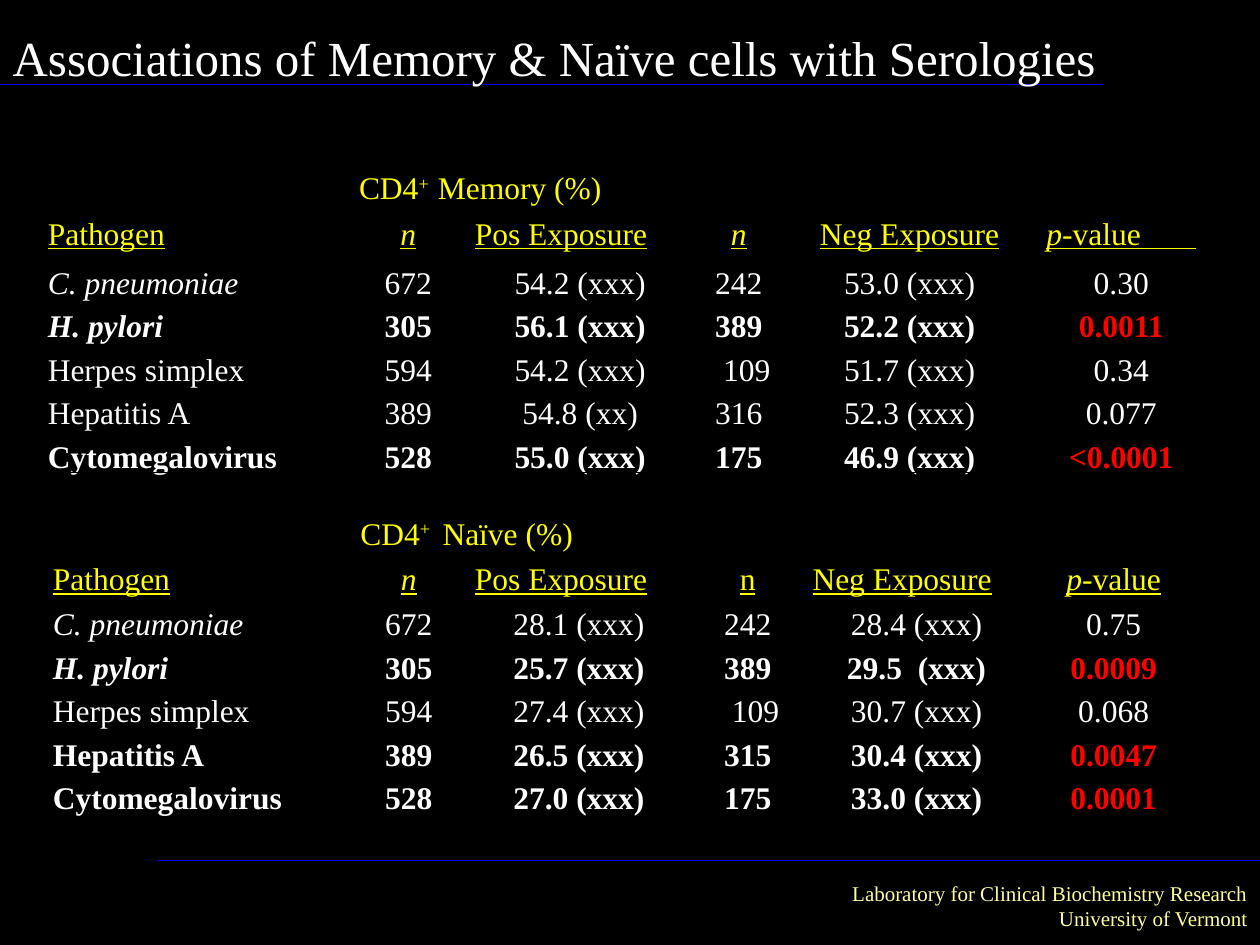
from lxml.etree import SubElement
from pptx import Presentation
from pptx.dml.color import RGBColor
from pptx.enum.shapes import MSO_CONNECTOR as Connector
from pptx.enum.text import MSO_ANCHOR as Anchor, MSO_AUTO_SIZE as AutoSize, PP_ALIGN as Align
from pptx.oxml.ns import qn
from pptx.util import Inches, Pt

COLORS = {"ground": "000000", "text": "FFFFFF", "heading": "FFFF00",
          "alert": "FF0000", "footer": "FFFF99", "rule": "0000FF"}
PLAIN_TABLE = "{2D5ABB26-0587-4C30-8999-92F81FD0307C}"
COLUMNS, ROWS = 100, 75  # grid over the slide

PATHOGENS = ["C. pneumoniae", "H. pylori", "Herpes simplex", "Hepatitis A", "Cytomegalovirus"]
POSITIVE_COUNTS = ["672", "305", "594", "389", "528"]

MEMORY = {
    "heading": [("CD4", {}), ("+  ", {"raised": True}), ("Memory (%)", {})],
    "count": {"italic": True}, "negative_align": Align.CENTER, "p_tail": "-value       ",
    "results": [
        ("54.2 (xxx)", "242", "53.0 (xxx)", "0.30"),
        ("56.1 (xxx)", "389", "52.2 (xxx)", "0.0011"),
        ("54.2 (xxx)", "109", "51.7 (xxx)", "0.34"),
        ("54.8 (xx)", "316", "52.3 (xxx)", "0.077"),
        ("55.0 (xxx)", "175", "46.9 (xxx)", "<0.0001"),
    ],
}
NAIVE = {
    "heading": [("CD4", {}), ("+ ", {"raised": True}), (" Naïve (%)", {})],
    "count": {}, "negative_align": Align.LEFT, "p_tail": "-value",
    "results": [
        ("28.1 (xxx)", "242", "28.4 (xxx)", "0.75"),
        ("25.7 (xxx)", "389", "29.5  (xxx)", "0.0009"),
        ("27.4 (xxx)", "109", "30.7 (xxx)", "0.068"),
        ("26.5 (xxx)", "315", "30.4 (xxx)", "0.0047"),
        ("27.0 (xxx)", "175", "33.0 (xxx)", "0.0001"),
    ],
}


class SlideBuilder:
    font = "Times New Roman"

    def __init__(self, deck):
        self.column = deck.slide_width / COLUMNS
        self.row = deck.slide_height / ROWS
        self.page = deck.slides.add_slide(deck.slide_layouts[5])
        fill = self.page.background.fill
        fill.solid()
        fill.fore_color.rgb = RGBColor.from_string(COLORS["ground"])

    def across(self, columns):
        return round(columns * self.column)

    def down(self, rows):
        return round(rows * self.row)

    def place(self, left, top, width, height):
        return self.across(left), self.down(top), self.across(width), self.down(height)

    def add_spans(self, para, spans, size=18, color="text", **paragraph_format):
        for name, value in paragraph_format.items():
            setattr(para, name, value)
        for text, extra in spans:
            span = para.add_run()
            span.text = text
            style = {"name": self.font, "size": Pt(size), "bold": False, "italic": False, **extra}
            if style.pop("raised", False):
                span.font._element.set("baseline", "30000")
            for name, value in style.items():
                setattr(span.font, name, value)
            span.font.color.rgb = RGBColor.from_string(COLORS[color])

    def title(self, text, *area):
        box = self.page.shapes.title
        box.left, box.top, box.width, box.height = self.place(*area)
        frame = box.text_frame
        for name, value in {"word_wrap": False, "auto_size": AutoSize.NONE,
                            "vertical_anchor": Anchor.TOP}.items():
            setattr(frame, name, value)
        self.add_spans(frame.paragraphs[0], [(text, {})], 28, alignment=Align.LEFT)
        self.page.shapes._spTree.append(box._element)  # in front of the rule

    def text(self, lines, *area):
        frame = self.page.shapes.add_textbox(*self.place(*area)).text_frame
        frame.word_wrap = False
        frame.auto_size = AutoSize.SHAPE_TO_FIT_TEXT
        for number, line in enumerate(lines):
            para = frame.add_paragraph() if number else frame.paragraphs[0]
            self.add_spans(para, [(line, {})], 12, "footer", alignment=Align.RIGHT)

    def rule(self, start, end, top):
        line = self.page.shapes.add_connector(
            Connector.STRAIGHT, self.across(start), self.down(top), self.across(end), self.down(top))
        line.line.color.rgb = RGBColor.from_string(COLORS["rule"])
        line.line.width = Pt(0.75)
        SubElement(line._element.spPr, qn("a:effectLst"))

    def border(self, cell, sides):
        properties = cell._tc.get_or_add_tcPr()
        for side in sides:
            edge = SubElement(properties, qn(f"a:ln{side}"), w=str(Pt(1)))
            SubElement(SubElement(edge, qn("a:solidFill")), qn("a:srgbClr"), val=COLORS["ground"])

    def table(self, content, left, top, widths, heights):
        shape = self.page.shapes.add_table(
            len(heights), len(widths), *self.place(left, top, sum(widths), sum(heights)))
        table = shape.table
        table.first_row = table.horz_banding = False
        table._tbl.tblPr.find(qn("a:tableStyleId")).text = PLAIN_TABLE
        for column, width in zip(table.columns, widths):
            column.width = self.across(width)
        for row, height in zip(table.rows, heights):
            row.height = self.down(height)

        # Edges and margins
        edges = {0: "LRT", 1: "LRB", 2: "LRT", len(heights) - 1: "LRB"}
        for number, row in enumerate(table.rows):
            for cell in row.cells:
                self.border(cell, edges.get(number, "LR"))
                cell.fill.background()
                cell.margin_left = cell.margin_right = self.across(0.7)
                cell.margin_top = cell.margin_bottom = 0

        # Group heading
        group = table.cell(0, 1)
        group.merge(table.cell(0, 4))
        group.vertical_anchor = Anchor.BOTTOM
        group.margin_bottom = self.down(0.4)
        self.add_spans(group.text_frame.paragraphs[0], content["heading"],
                       color="heading", line_spacing=1.15)

        # Column headings
        italic = {"italic": True}
        headings = [
            ([("Pathogen", {})], Align.LEFT), ([("n", italic)], Align.CENTER),
            ([("Pos Exposure", {})], Align.LEFT), ([("n", content["count"])], Align.CENTER),
            ([("Neg Exposure", {})], content["negative_align"]),
            ([("p", italic), (content["p_tail"], {})], Align.CENTER),
        ]
        for cell, (spans, align) in zip(table.rows[1].cells, headings):
            underlined = [(text, {"underline": True, **extra}) for text, extra in spans]
            self.add_spans(cell.text_frame.paragraphs[0], underlined, color="heading",
                           alignment=align, line_spacing=1.15)

        # Results: significant rows are bold, with a red p-value
        records = zip(PATHOGENS, POSITIVE_COUNTS, content["results"])
        for number, (pathogen, count, results) in enumerate(records, start=2):
            significant = float(results[-1].strip("<")) < 0.05
            for index, value in enumerate((pathogen, count, *results)):
                cell = table.cell(number, index)
                if value == "109":
                    cell.margin_left += Pt(9)
                style = {"bold": significant, "italic": index == 0 and ". " in value}
                self.add_spans(cell.text_frame.paragraphs[0], [(value, style)],
                               color="alert" if significant and index == 5 else "text",
                               alignment=Align.CENTER if index else Align.LEFT,
                               line_spacing=1.15, space_after=Pt(10))


def main():
    deck = Presentation()
    deck.slide_width, deck.slide_height = Inches(10), Inches(7.5)
    slide = SlideBuilder(deck)

    # Footer
    slide.rule(12.5, COLUMNS, 68.3)
    slide.text(["Laboratory for Clinical Biochemistry Research", "University of Vermont"],
               66.5, 69.4, 33.5, 5)

    # Serology tables
    slide.rule(0, 87.5, 6.7)
    slide.table(MEMORY, 3.1, 10, [24.7, 9.2, 18.1, 7.1, 20, 13.6],
                [6.8, 3.9] + [3.2] * 4 + [3.6])
    slide.table(NAIVE, 3.5, 37.5, [24.4, 9.1, 17.9, 8.9, 17.9, 13.4],
                [6.7, 3.6] + [2.8] * 4 + [3.3])

    # Title
    slide.title("Associations of Memory & Naïve cells with Serologies", 0, 1.7, 88.8, 5.7)
    deck.save("out.pptx")


if __name__ == "__main__":
    main()
